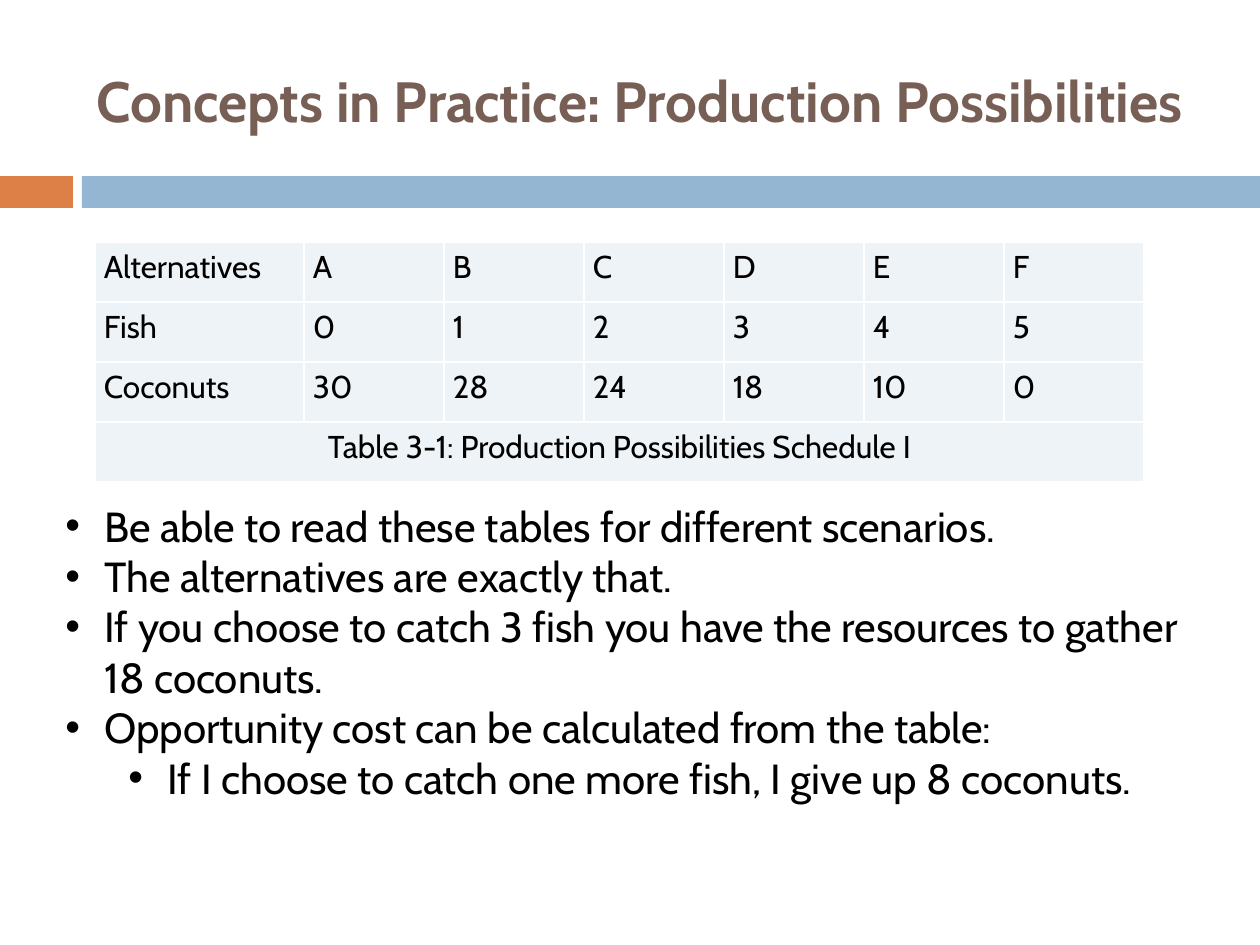
from lxml.etree import SubElement
from pptx import Presentation
from pptx.dml.color import RGBColor
from pptx.enum.shapes import MSO_SHAPE
from pptx.enum.text import MSO_ANCHOR, PP_ALIGN
from pptx.oxml.ns import qn
from pptx.util import Emu, Pt

FONT = "Cabin"
BROWN = RGBColor(0x77, 0x5F, 0x55)
ORANGE = RGBColor(0xDD, 0x80, 0x47)
BLUE = RGBColor(0x94, 0xB6, 0xD2)
PALE = RGBColor(0xEE, 0xF3, 0xF7)
WHITE = RGBColor(0xFF, 0xFF, 0xFF)
BLACK = RGBColor(0x00, 0x00, 0x00)

SCHEDULE = [
    ["Alternatives", "A", "B", "C", "D", "E", "F"],
    ["Fish", "0", "1", "2", "3", "4", "5"],
    ["Coconuts", "30", "28", "24", "18", "10", "0"],
]
CAPTION = "Table 3-1: Production Possibilities Schedule I"
POINTS = [  # (level, text)
    (0, "Be able to read these tables for different scenarios."),
    (0, "The alternatives are exactly that."),
    (0, "If you choose to catch 3 fish you have the resources to gather 18 coconuts."),
    (0, "Opportunity cost can be calculated from the table:"),
    (1, "If I choose to catch one more fish, I give up 8 coconuts."),
]


def px(length):
    return Emu(round(length * 914400 / 126))


def format_paragraph(paragraph, size, color, bold=False):
    for run in paragraph.runs:
        run.font.name = FONT
        run.font.size = Pt(size)
        run.font.bold = bold
        run.font.color.rgb = color


def add_text_frame(slide, box):
    text_frame = slide.shapes.add_textbox(*map(px, box)).text_frame
    text_frame.word_wrap = True
    return text_frame


def add_title(slide, box, text):
    text_frame = add_text_frame(slide, box)
    text_frame.vertical_anchor = MSO_ANCHOR.MIDDLE
    text_frame.text = text
    format_paragraph(text_frame.paragraphs[0], 32.4, BROWN, bold=True)


def add_band(slide, box, tab=73, gap=9):
    left, top, width, height = box
    start = tab + gap
    for x, part_width, color in ((left, tab, ORANGE), (left + start, width - start, BLUE)):
        bar = slide.shapes.add_shape(
            MSO_SHAPE.RECTANGLE, px(x), px(top), px(part_width), px(height))
        bar.shadow.inherit = False
        bar.fill.solid()
        bar.fill.fore_color.rgb = color
        bar.line.fill.background()


def style_cell(cell):
    cell.margin_left = cell.margin_right = px(9)
    cell.margin_top = cell.margin_bottom = 0
    paragraph = cell.text_frame.paragraphs[0]
    paragraph.line_spacing = 1.15
    format_paragraph(paragraph, 18, BLACK)
    # Borders come before the fill in the cell properties
    properties = cell._tc.get_or_add_tcPr()
    for side in ("a:lnL", "a:lnR", "a:lnT", "a:lnB"):
        line = SubElement(properties, qn(side), w=str(Pt(1)))
        solid = SubElement(line, qn("a:solidFill"))
        SubElement(solid, qn("a:srgbClr"), val=str(WHITE))
    cell.fill.solid()
    cell.fill.fore_color.rgb = PALE


def add_schedule(slide, box, label_width=209):
    row_count, column_count = len(SCHEDULE) + 1, len(SCHEDULE[0])
    table = slide.shapes.add_table(row_count, column_count, *map(px, box)).table
    value_width = (box[2] - label_width) / (column_count - 1)
    for index, column in enumerate(table.columns):
        column.width = px(value_width if index else label_width)
    for row in table.rows:
        row.height = px(box[3] / row_count)

    for row, values in zip(table.rows, SCHEDULE):
        for cell, value in zip(row.cells, values):
            cell.text = value

    # Caption across the last row
    caption = table.cell(row_count - 1, 0)
    caption.merge(table.cell(row_count - 1, column_count - 1))
    caption.text = CAPTION
    caption.text_frame.paragraphs[0].alignment = PP_ALIGN.CENTER

    for cell in table.iter_cells():
        style_cell(cell)


def add_points(slide, box, hang=39, step=63):
    text_frame = add_text_frame(slide, box)
    text_frame.text = "\n".join(text for _, text in POINTS)
    for paragraph, (level, _) in zip(text_frame.paragraphs, POINTS):
        paragraph.level = level
        format_paragraph(paragraph, 24, BLACK)
        properties = paragraph._p.get_or_add_pPr()
        properties.set("marL", str(px(hang + level * step)))
        properties.set("indent", str(-px(hang)))
        SubElement(properties, qn("a:buFont"), typeface="Arial")
        SubElement(properties, qn("a:buChar"), char="•")


def main():
    presentation = Presentation()
    presentation.slide_width, presentation.slide_height = px(1260), px(945)
    slide = presentation.slides.add_slide(presentation.slide_layouts[6])
    add_band(slide, (0, 176, 1260, 32))
    add_title(slide, (84, 32, 1124, 136), "Concepts in Practice: Production Possibilities")
    add_schedule(slide, (95, 242, 1049, 240))
    add_points(slide, (53, 494, 1155, 394))
    presentation.save("out.pptx")


if __name__ == "__main__":
    main()
